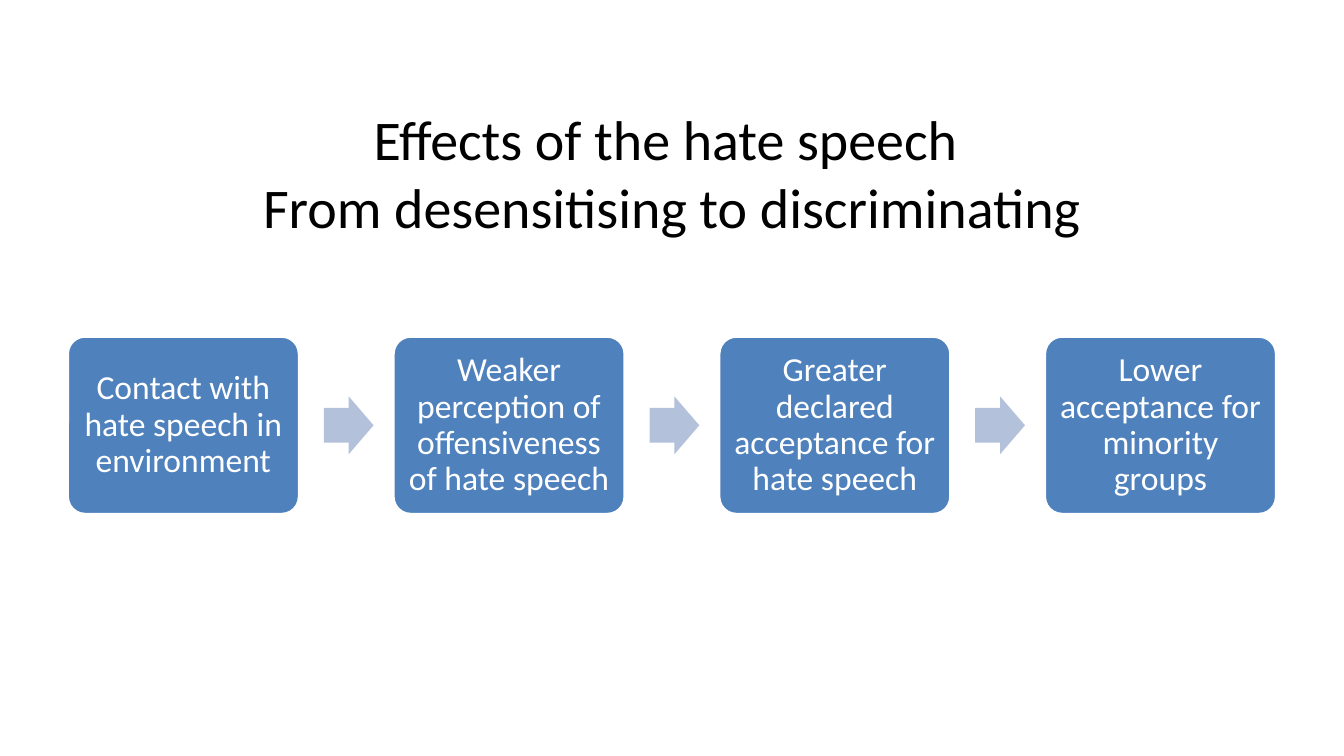
from pptx import Presentation
from pptx import util as u
from pptx.dml.color import RGBColor
from pptx.enum import shapes, text

STEPS = [
    "Contact with hate speech in environment",
    "Weaker perception of offensiveness of hate speech",
    "Greater declared acceptance for hate speech",
    "Lower acceptance for minority groups",
]
SLIDE_WIDTH = 10
SLIDE_HEIGHT = SLIDE_WIDTH * 9 / 16
LEFT, RIGHT = 0.5, 9.5
STEP_TOP, STEP_WIDTH, STEP_HEIGHT = 2.5, 1.73, 1.33
PITCH = (RIGHT - LEFT - STEP_WIDTH) / (len(STEPS) - 1)
ARROW_OFFSET, ARROW_WIDTH, ARROW_HEIGHT = 1.91, 0.37, 0.43


def color(value):
    """Turn a hex string into a colour."""
    return RGBColor.from_string(value)


def add_span(para, words, size, ink):
    """Add one run of Calibri text."""
    span = para.add_run()
    span.text = words
    span.font.name = "Calibri"
    span.font.size = u.Pt(size)
    span.font.color.rgb = color(ink)


def add_title(slide, lines):
    """Add the centred title, with a line break between its lines."""
    box = slide.shapes.add_textbox(u.Inches(LEFT), u.Inches(0.77), u.Inches(RIGHT - LEFT), u.Inches(1.02))
    frame = box.text_frame
    frame.word_wrap = True
    frame.vertical_anchor = text.MSO_ANCHOR.MIDDLE
    para = frame.paragraphs[0]
    para.alignment = text.PP_ALIGN.CENTER
    for index, line in enumerate(lines):
        if index:
            para.add_line_break()
        add_span(para, line, 30, "000000")


def add_solid(slide, kind, left, top, width, height, fill, adjustments):
    """Add a filled preset shape without outline or shadow."""
    shape = slide.shapes.add_shape(kind, u.Inches(left), u.Inches(top), u.Inches(width), u.Inches(height))
    shape.shadow.inherit = False
    shape.fill.solid()
    shape.fill.fore_color.rgb = color(fill)
    shape.line.fill.background()
    for index, value in enumerate(adjustments):
        shape.adjustments[index] = value
    return shape


def add_step(slide, left, words):
    """Add a rounded box with the name of one step."""
    box = add_solid(slide, shapes.MSO_SHAPE.ROUNDED_RECTANGLE, left, STEP_TOP,
                    STEP_WIDTH, STEP_HEIGHT, "4F81BD", [0.1])
    box.line.color.rgb = color("FFFFFF")
    box.line.width = u.Pt(2)
    frame = box.text_frame
    frame.word_wrap = True
    frame.vertical_anchor = text.MSO_ANCHOR.MIDDLE
    frame.margin_left = frame.margin_right = u.Inches(0.05)
    frame.margin_top = frame.margin_bottom = u.Inches(0.07)
    para = frame.paragraphs[0]
    para.alignment = text.PP_ALIGN.CENTER
    para.line_spacing = 0.9
    add_span(para, words, 18, "FFFFFF")


def add_arrow(slide, left):
    """Add an arrow level with the middle of the steps."""
    top = STEP_TOP + (STEP_HEIGHT - ARROW_HEIGHT) / 2
    add_solid(slide, shapes.MSO_SHAPE.RIGHT_ARROW, left, top,
              ARROW_WIDTH, ARROW_HEIGHT, "B3C1DB", [0.6, 0.5])


def main():
    """Build the slide and save the deck."""
    deck = Presentation()
    deck.slide_width = u.Inches(SLIDE_WIDTH)
    deck.slide_height = u.Inches(SLIDE_HEIGHT)
    slide = deck.slides.add_slide(deck.slide_layouts[6])
    add_title(slide, ["Effects of the hate speech ", "From desensitising to discriminating"])
    for index, words in enumerate(STEPS):
        left = LEFT + index * PITCH
        if index:
            add_arrow(slide, left - PITCH + ARROW_OFFSET)
        add_step(slide, left, words)
    deck.save("out.pptx")


if __name__ == "__main__":
    main()
